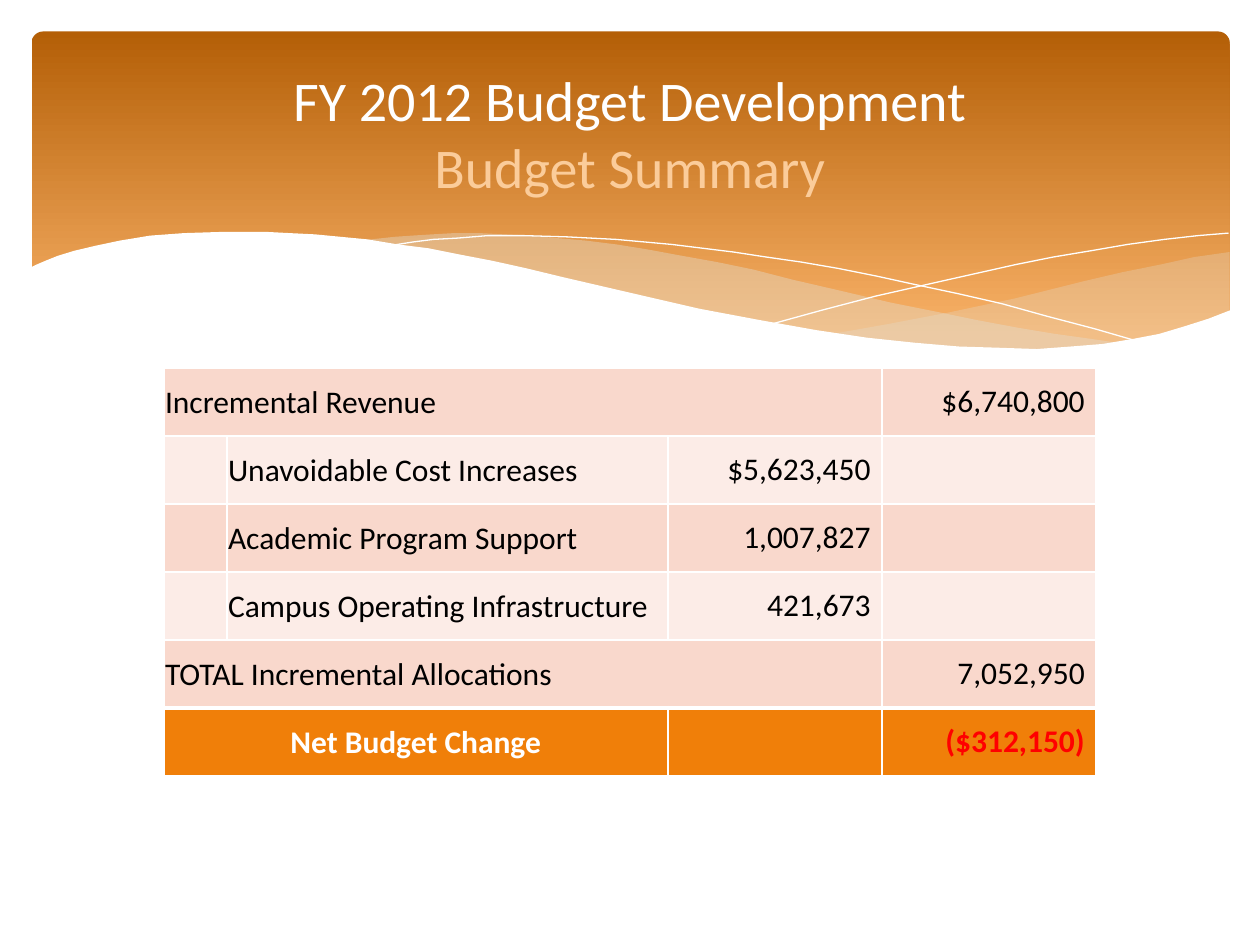
from pptx import Presentation
from pptx.dml.color import RGBColor
from pptx.enum.shapes import MSO_SHAPE
from pptx.enum.text import MSO_ANCHOR, PP_ALIGN
from pptx.oxml import parse_xml
from pptx.oxml.ns import nsdecls, qn
from pptx.util import Inches, Pt
from lxml import etree

ROUNDED = MSO_SHAPE.ROUNDED_RECTANGLE
MIDDLE = MSO_ANCHOR.MIDDLE
LEFT, CENTER, RIGHT = PP_ALIGN.LEFT, PP_ALIGN.CENTER, PP_ALIGN.RIGHT
WHITE, BLACK, RED = "FFFFFF", "000000", "FF0000"
ORANGE, PEACH, PALE, SAND = "F07F09", "F9D8CC", "FCECE7", "E3DED1"


def rgb(color):
    return RGBColor.from_string(color)


def write(frame, text, color=BLACK, size=18, bold=False, align=LEFT):
    paragraph = frame.paragraphs[0]
    paragraph.alignment = align
    run = paragraph.add_run()
    run.text = text
    run.font.name = "Calibri"
    run.font.size = Pt(size)
    run.font.bold = bold
    run.font.color.rgb = rgb(color)


prs = Presentation()
prs.slide_width, prs.slide_height = Inches(10), Inches(7.5)
slide = prs.slides.add_slide(prs.slide_layouts[6])

banner = slide.shapes.add_shape(ROUNDED, Inches(0.25), Inches(0.25), Inches(9.51), Inches(2.7))
banner.adjustments[0] = 0.034
banner.shadow.inherit = False
banner.line.fill.background()
banner.fill.gradient()
banner.fill.gradient_angle = 270
for stop, (position, color) in zip(banner.fill.gradient_stops, [(0, "B45F07"), (0.9, "F9B268")]):
    stop.position = position
    stop.color.rgb = rgb(color)

right_swell = [
    (9.76, 2), (9.48, 2.04), (9.21, 2.1), (8.91, 2.16), (8.61, 2.23), (8.05, 2.37),
    (7.53, 2.48), (7.06, 2.57), (6.61, 2.65), (6.91, 2.69), (7.19, 2.72), (7.45, 2.75),
    (7.69, 2.77), (8.03, 2.78), (8.35, 2.77), (8.63, 2.75), (8.89, 2.72), (9.13, 2.67),
    (9.35, 2.62), (9.49, 2.57), (9.63, 2.52), (9.76, 2.47),
]
middle_swell = [
    (8.93, 2.73), (8.66, 2.69), (8.37, 2.65), (8.07, 2.6), (7.75, 2.54), (7.41, 2.47),
    (7.06, 2.4), (6.68, 2.31), (6.29, 2.22), (5.98, 2.14), (5.69, 2.08), (5.41, 2.03),
    (5.14, 1.98), (4.89, 1.94), (4.65, 1.91), (4.42, 1.89), (4.2, 1.87), (3.99, 1.86),
    (3.8, 1.85), (3.61, 1.85), (3.44, 1.86), (3.28, 1.87), (3.13, 1.88), (2.86, 1.91),
    (3.23, 1.96), (3.62, 2.03), (4.04, 2.11), (4.49, 2.22), (4.91, 2.32), (5.3, 2.4),
    (5.66, 2.48), (6.01, 2.55), (6.34, 2.61), (6.65, 2.66), (6.95, 2.7), (7.22, 2.74),
    (7.48, 2.76), (7.73, 2.77), (7.96, 2.78), (8.28, 2.78), (8.57, 2.77), (8.76, 2.75),
]
falling_line = [
    (3.09, 1.95), (3.28, 1.92), (3.44, 1.9), (3.63, 1.89), (3.87, 1.87), (4.16, 1.87),
    (4.5, 1.88), (4.89, 1.9), (5.33, 1.94), (5.82, 2), (6.08, 2.04), (6.36, 2.08),
    (6.65, 2.13), (6.95, 2.19), (7.27, 2.26), (7.6, 2.33), (7.95, 2.41), (8.31, 2.51),
    (8.69, 2.61), (9.07, 2.72),
]
rising_line = [
    (6.13, 2.57), (6.53, 2.46), (6.95, 2.35), (7.48, 2.23), (8.06, 2.1), (8.36, 2.04),
    (8.66, 1.99), (8.95, 1.94), (9.24, 1.9), (9.51, 1.87), (9.75, 1.85),
]
white_wave = [
    (9.77, 2.46), (9.59, 2.53), (9.4, 2.59), (9.2, 2.65), (8.99, 2.69), (8.75, 2.73),
    (8.5, 2.75), (8.23, 2.77), (7.93, 2.76), (7.61, 2.75), (7.26, 2.72), (6.88, 2.68),
    (6.48, 2.62), (6.03, 2.54), (5.55, 2.45), (5.03, 2.33), (4.47, 2.2), (4.18, 2.13),
    (3.91, 2.07), (3.65, 2.02), (3.4, 1.97), (3.16, 1.94), (2.92, 1.9), (2.71, 1.88),
    (2.5, 1.86), (2.3, 1.85), (2.11, 1.84), (1.77, 1.84), (1.46, 1.85), (1.19, 1.87),
    (0.95, 1.91), (0.76, 1.95), (0.59, 1.99), (0.46, 2.03), (0.36, 2.07), (0.29, 2.1),
    (0.23, 2.13), (0.23, 3.29), (9.77, 3.29),
]
waves = [
    (right_swell, SAND, 29), (middle_swell, SAND, 40),
    (falling_line, None, None), (rising_line, None, None), (white_wave, WHITE, 100),
]
for points, color, opacity in waves:
    start, *rest = [(Inches(x), Inches(y)) for x, y in points]
    builder = slide.shapes.build_freeform(*start)
    builder.add_line_segments(rest, close=color is not None)
    wave = builder.convert_to_shape()
    wave.shadow.inherit = False
    if color is None:
        wave.fill.background()
        wave.line.color.rgb = rgb(WHITE)
        wave.line.width = Pt(0)
        continue
    wave.line.fill.background()
    wave.fill.solid()
    wave.fill.fore_color.rgb = rgb(color)
    if opacity < 100:
        tint = wave.fill._xPr.find(qn("a:solidFill"))[0]
        etree.SubElement(tint, qn("a:alpha")).set("val", str(opacity * 1000))

budget_rows = [
    ("Incremental Revenue", "", "", "$6,740,800"),
    ("", "Unavoidable Cost Increases", "$5,623,450", ""),
    ("", "Academic Program Support", "1,007,827", ""),
    ("", "Campus Operating Infrastructure", "421,673", ""),
    ("TOTAL Incremental Allocations", "", "", "7,052,950"),
    ("Net Budget Change", "", "", "($312,150)"),
]
net_row = len(budget_rows) - 1
budget = slide.shapes.add_table(
    len(budget_rows), 4, Inches(1.3), Inches(2.92), Inches(7.4), Inches(3.25)).table
budget.first_row = budget.horz_banding = False
for column, width in zip(budget.columns, [0.5, 3.5, 1.7, 1.7]):
    column.width = Inches(width)
for row, last_column in [(0, 2), (4, 2), (net_row, 1)]:
    budget.cell(row, 0).merge(budget.cell(row, last_column))

for r, values in enumerate(budget_rows):
    budget.rows[r].height = Inches(0.54)
    is_net = r == net_row
    for c, value in enumerate(values):
        cell = budget.cell(r, c)
        properties = cell._tc.get_or_add_tcPr()
        for side in "LRTB":
            thick = (is_net and side == "T") or (r == net_row - 1 and side == "B")
            properties.append(parse_xml(
                f'<a:ln{side} {nsdecls("a")} w="{Pt(3 if thick else 1)}"><a:solidFill>'
                f'<a:srgbClr val="{WHITE}"/></a:solidFill></a:ln{side}>'))
        cell.fill.solid()
        cell.fill.fore_color.rgb = rgb(ORANGE if is_net else (PEACH, PALE)[r % 2])
        cell.vertical_anchor = MIDDLE
        if not value:
            continue
        is_amount = c > 1
        if not is_amount:
            cell.margin_left = cell.margin_right = cell.margin_top = Inches(0.01)
            cell.margin_bottom = 0
        else:
            cell.margin_left = cell.margin_right = Inches(0.09)
        net_color = RED if is_amount else WHITE
        label_align = CENTER if is_net else LEFT
        write(cell.text_frame, value, color=net_color if is_net else BLACK, bold=is_net,
              align=RIGHT if is_amount else label_align)

title = slide.shapes.add_textbox(Inches(0.5), Inches(0.37), Inches(9), Inches(1.37)).text_frame
title.word_wrap = True
title.vertical_anchor = MIDDLE
write(title, "FY 2012 Budget Development", color=WHITE, size=32, align=CENTER)
title.paragraphs[0].add_line_break()
write(title, "Budget Summary", color="FBCC9A", size=32, align=CENTER)

prs.save("out.pptx")
